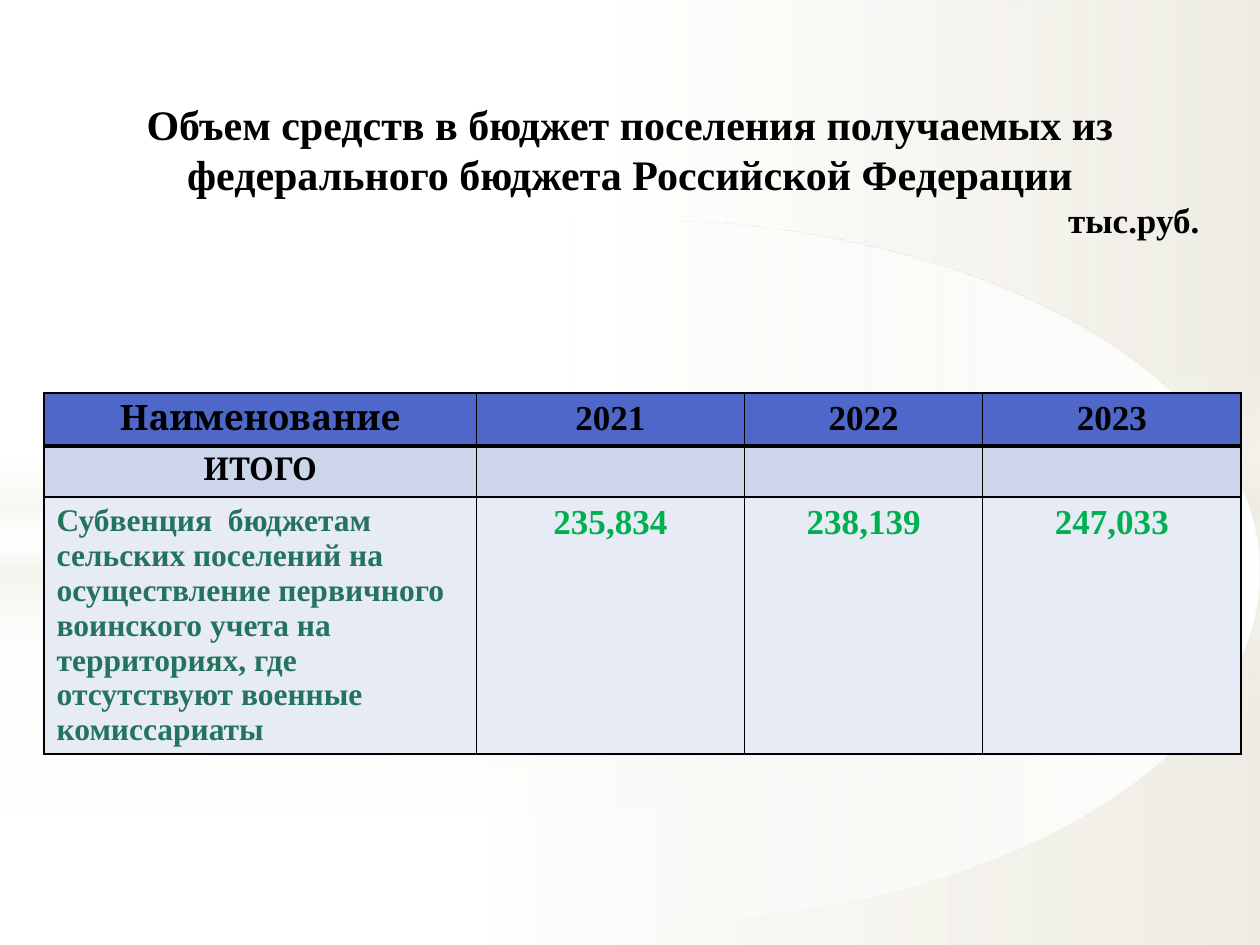
from lxml.etree import SubElement
from pptx import Presentation
from pptx.dml.color import RGBColor
from pptx.enum.shapes import MSO_SHAPE
from pptx.enum.text import MSO_ANCHOR, PP_ALIGN
from pptx.oxml.ns import qn
from pptx.util import Inches, Pt

BLACK = RGBColor(0x00, 0x00, 0x00)
WHITE = RGBColor(0xFF, 0xFF, 0xFF)
CREAM = RGBColor(0xEE, 0xEC, 0xE1)
BLUE = RGBColor(0x4E, 0x67, 0xC8)
PALE = RGBColor(0xCC, 0xD5, 0xEA)
LIGHT = RGBColor(0xE7, 0xEB, 0xF5)
TEAL = RGBColor(0x23, 0x73, 0x5D)
GREEN = RGBColor(0x00, 0xB0, 0x50)
SERIF, HEAD = "Times New Roman", "Cambria"

# Gradient stops: position %, colour, opacity %
LOW = [(0, WHITE, 92), (37, WHITE, 77), (100, CREAM, 80)]
HIGH = [(0, WHITE, 90), (48, WHITE, 63), (100, CREAM, 80)]
BAND = [(0, WHITE, 0), (29, WHITE, 30), (45, CREAM, 40),
        (55, WHITE, 26), (65, CREAM, 60), (100, WHITE, 0)]
GLOW = [(0, WHITE, 100), (55, WHITE, 0)]


def style(par, font, size, color, align):
    par.alignment = align
    for run in par.runs:
        run.font.name, run.font.size = font, Pt(size)
        run.font.bold = True
        run.font.color.rgb = color


def add_veil(slide, kind, top, height, stops, angle):
    """Add a full-width shape with a see-through gradient."""
    shape = slide.shapes.add_shape(
        kind, 0, Inches(top), Inches(10), Inches(height))
    shape.shadow.inherit = False
    shape.line.fill.background()
    shape.fill.gradient()
    grad = shape.fill._xPr.find(qn("a:gradFill"))
    for child in list(grad):
        grad.remove(child)
    items = SubElement(grad, qn("a:gsLst"))
    for place, color, alpha in stops:
        stop = SubElement(items, qn("a:gs"), pos=str(place * 1000))
        tint = SubElement(stop, qn("a:srgbClr"), val=str(color))
        SubElement(tint, qn("a:alpha"), val=str(alpha * 1000))
    SubElement(grad, qn("a:lin"), ang=str(angle * 60000), scaled="0")


def add_backdrop(slide, split, band):
    """Add one layer: two panels that meet at split, a band and a glow."""
    rect = MSO_SHAPE.RECTANGLE
    add_veil(slide, rect, split, 7.5 - split, LOW, 0)
    add_veil(slide, rect, 0, split, HIGH, 0)
    add_veil(slide, rect, band, 2.5, BAND, 90)
    add_veil(slide, MSO_SHAPE.OVAL, 1.75, 5.58, GLOW, 180)


def set_title(slide, left, top, width, height):
    title = slide.shapes.title
    title.left, title.top = Inches(left), Inches(top)
    title.width, title.height = Inches(width), Inches(height)
    frame = title.text_frame
    frame.word_wrap = True
    frame.vertical_anchor = MSO_ANCHOR.MIDDLE
    frame.margin_left = frame.margin_right = Inches(0.48)
    frame.text = ("Объем средств в бюджет поселения получаемых из "
                  "федерального бюджета Российской Федерации")
    style(frame.paragraphs[0], SERIF, 24, BLACK, PP_ALIGN.CENTER)
    unit = frame.add_paragraph()
    unit.text = "тыс.руб."
    style(unit, SERIF, 20, BLACK, PP_ALIGN.RIGHT)
    for par in frame.paragraphs:
        par.space_before = Pt(0)
    slide.shapes._spTree.append(title._element)  # in front of the backdrop


def set_edges(cell, top, bottom):
    props = cell._tc.get_or_add_tcPr()
    for side, width in zip("LRTB", (0.96, 0.96, top, bottom)):
        line = SubElement(props, qn("a:ln" + side), w=str(Pt(width)))
        fill = SubElement(line, qn("a:solidFill"))
        SubElement(fill, qn("a:srgbClr"), val=str(BLACK))


def add_budget(slide, left, top):
    cols, heights = [3.43, 2.13, 1.89, 2.05], [0.41, 0.39, 2.04]
    center = PP_ALIGN.CENTER
    # Texts, fill, top and bottom edge, style of first cell, style of the rest
    rows = [
        (["Наименование", "2021", "2022", "2023"], BLUE, 0.96, 3,
         (HEAD, 20, BLACK, center), (SERIF, 20, BLACK, center)),
        (["ИТОГО", "", "", ""], PALE, 3, 0.96,
         (HEAD, 18, BLACK, center), (SERIF, 18, BLACK, center)),
        (["Субвенция  бюджетам сельских поселений на осуществление "
          "первичного воинского учета на территориях, где отсутствуют "
          "военные комиссариаты", "235,834", "238,139", "247,033"],
         LIGHT, 0.96, 0.96,
         (SERIF, 18, TEAL, PP_ALIGN.LEFT), (SERIF, 20, GREEN, center)),
    ]
    table = slide.shapes.add_table(
        len(rows), len(cols), Inches(left), Inches(top),
        Inches(sum(cols)), Inches(sum(heights))).table
    for col, width in zip(table.columns, cols):
        col.width = Inches(width)
    for r, (texts, fill, upper, lower, first, rest) in enumerate(rows):
        table.rows[r].height = Inches(heights[r])
        for c, text in enumerate(texts):
            cell = table.cell(r, c)
            set_edges(cell, upper, lower)
            cell.fill.solid()
            cell.fill.fore_color.rgb = fill
            if text:
                cell.text_frame.text = text
                style(cell.text_frame.paragraphs[0], *(rest if c else first))


def main():
    deck = Presentation()
    deck.slide_width, deck.slide_height = Inches(10), Inches(7.5)
    slide = deck.slides.add_slide(deck.slide_layouts[5])
    for split, band in [(5.58, 4.12), (4.23, 2.9)]:
        add_backdrop(slide, split, band)
    add_budget(slide, 0.35, 3.12)
    set_title(slide, 0, 0.6, 10, 1.49)
    deck.save("out.pptx")


if __name__ == "__main__":
    main()
